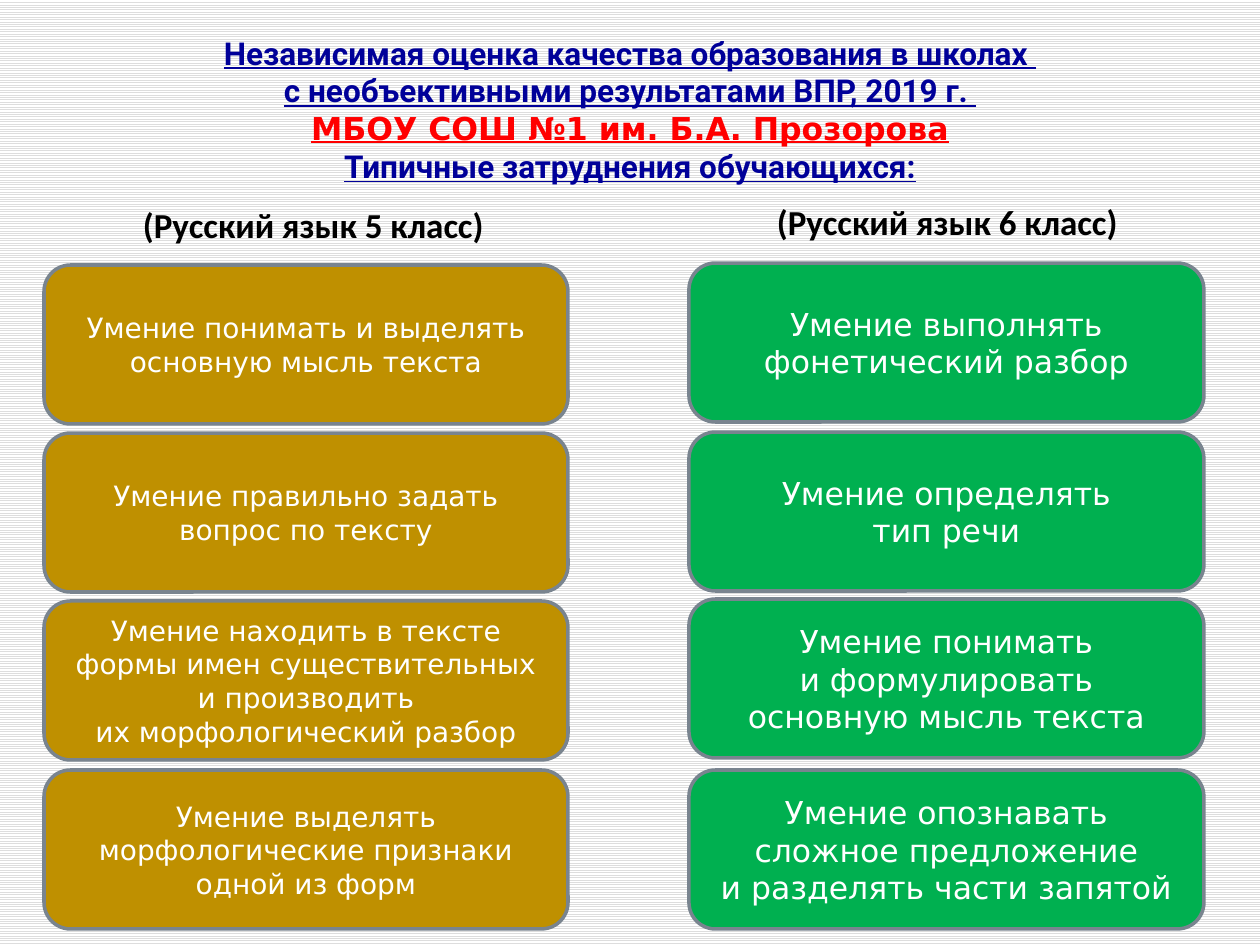
from pptx import Presentation
from pptx.dml.color import RGBColor
from pptx.enum.dml import MSO_PATTERN
from pptx.enum.shapes import MSO_SHAPE
from pptx.enum.text import MSO_ANCHOR, PP_ALIGN
from pptx.util import Pt

PX = 914400 / 126
ROUNDED = MSO_SHAPE.ROUNDED_RECTANGLE
LIGHT_HORIZONTAL = MSO_PATTERN.LIGHT_HORIZONTAL
MIDDLE, BOTTOM = MSO_ANCHOR.MIDDLE, MSO_ANCHOR.BOTTOM
CENTER = PP_ALIGN.CENTER

WHITE = RGBColor(0xFF, 0xFF, 0xFF)
BLACK = RGBColor(0x00, 0x00, 0x00)
STRIPE = RGBColor(0xDD, 0xDD, 0xDD)
NAVY = RGBColor(0x00, 0x00, 0x99)
RED = RGBColor(0xFF, 0x00, 0x00)
OCHRE = RGBColor(0xBF, 0x90, 0x00)
GREEN = RGBColor(0x00, 0xB0, 0x50)
GREY = RGBColor(0x79, 0x84, 0x8F)


def px(*lengths):
    return [round(length * PX) for length in lengths]


def style(font, color, **values):
    font.color.rgb = color
    for key, value in values.items():
        setattr(font, key, value)


prs = Presentation()
prs.slide_width, prs.slide_height = px(1260, 945)
slide = prs.slides.add_slide(prs.slide_layouts[6])

# Striped background
background = slide.background.fill
background.patterned()
background.pattern = LIGHT_HORIZONTAL
background.fore_color.rgb = STRIPE
background.back_color.rgb = WHITE

# Title: one paragraph with line breaks
title = slide.shapes.add_textbox(*px(94, 122, 1072, 69)).text_frame
title.word_wrap = True
title.vertical_anchor = BOTTOM
heading = title.paragraphs[0]
heading.alignment = CENTER
heading.font.size = Pt(18)
title_lines = [
    ("Независимая оценка качества образования в школах ", "Roboto", NAVY),
    ("с необъективными результатами ВПР, 2019 г. ", "Roboto", NAVY),
    ("МБОУ СОШ №1 им. Б.А. Прозорова", "DejaVu Sans", RED),
    ("Типичные затруднения обучающихся:", "Roboto", NAVY),
]
for number, (line, face, color) in enumerate(title_lines):
    if number:
        heading.add_line_break()
    run = heading.add_run()
    run.text = line
    style(run.font, color, name=face, size=Pt(18), bold=True, underline=True)

# Two columns: a class heading above four skills
columns = [
    {
        "class": "(Русский язык 5 класс)", "class_box": (126, 184, 375, 86),
        "left": 44, "width": 524, "tops": (265, 433, 601, 770),
        "fill": OCHRE, "size": 16,
        "skills": [
            "Умение понимать и выделять основную мысль текста",
            "Умение правильно задать вопрос по тексту",
            "Умение находить в тексте формы имен существительных\n"
            "и производить\nих морфологический разбор",
            "Умение выделять морфологические признаки одной из форм",
        ],
    },
    {
        "class": "(Русский язык 6 класс)", "class_box": (764, 186, 367, 76),
        "left": 689, "width": 515, "tops": (263, 432, 599, 770),
        "fill": GREEN, "size": 18,
        "skills": [
            "Умение выполнять фонетический разбор",
            "Умение определять\nтип речи",
            "Умение понимать\nи формулировать\nосновную мысль текста",
            "Умение опознавать\nсложное предложение\nи разделять части запятой",
        ],
    },
]
for column in columns:
    class_frame = slide.shapes.add_textbox(*px(*column["class_box"])).text_frame
    class_frame.word_wrap = True
    class_frame.vertical_anchor = MIDDLE
    class_frame.text = column["class"]
    class_line = class_frame.paragraphs[0]
    class_line.alignment = CENTER
    class_line.line_spacing = 0.9
    style(class_line.runs[0].font, BLACK, name="Calibri", size=Pt(20), bold=True)

    for top, skill in zip(column["tops"], column["skills"]):
        card = slide.shapes.add_shape(
            ROUNDED, *px(column["left"], top, column["width"], 159))
        card.shadow.inherit = False
        card.fill.solid()
        card.fill.fore_color.rgb = column["fill"]
        card.line.color.rgb = GREY
        card.line.width = Pt(2)
        card.text_frame.word_wrap = True
        card.text_frame.vertical_anchor = MIDDLE
        card.text_frame.text = skill
        for paragraph in card.text_frame.paragraphs:
            paragraph.alignment = CENTER
            style(paragraph.runs[0].font, WHITE,
                  name="DejaVu Sans", size=Pt(column["size"]))

prs.save("out.pptx")
